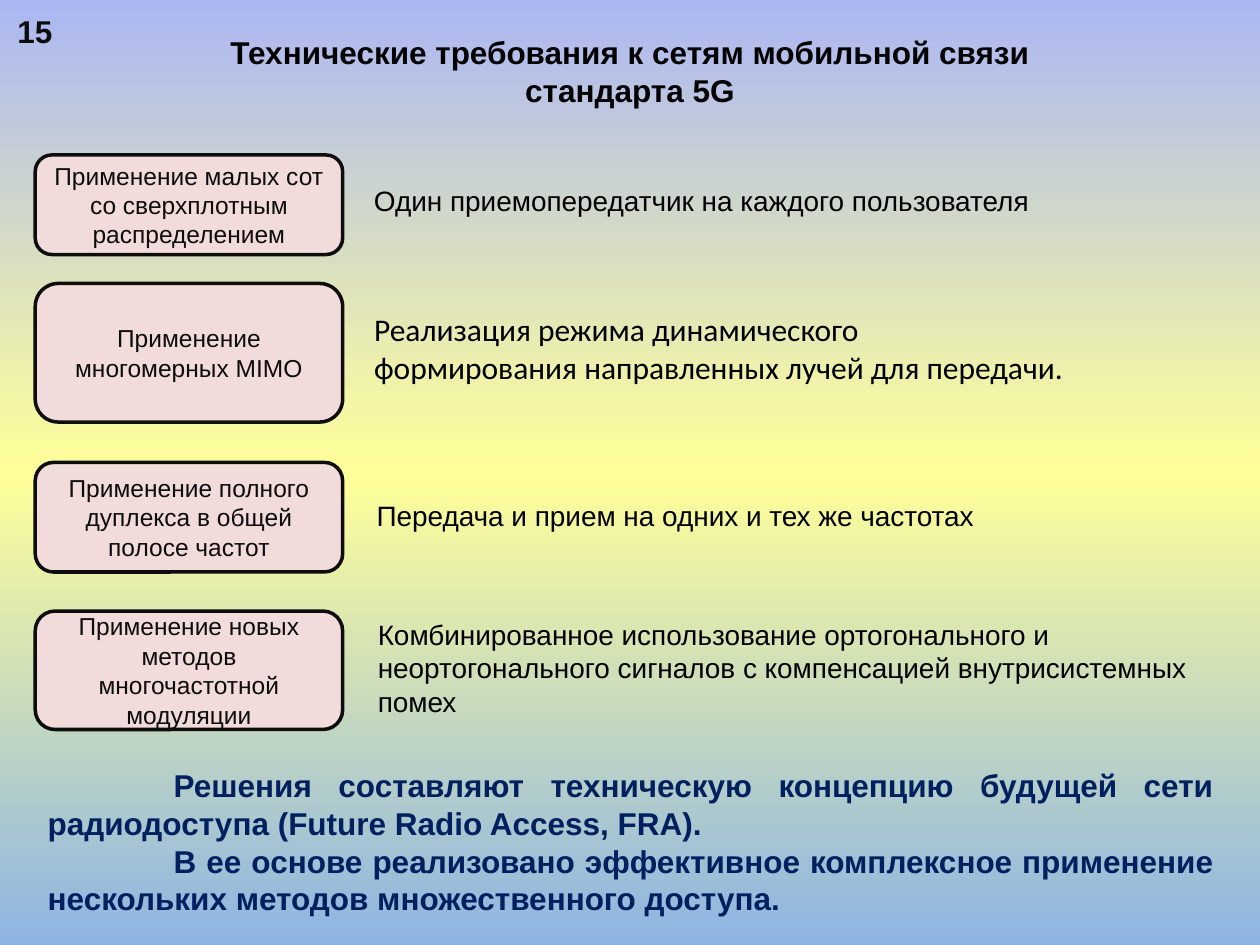
"""Build the slide on technical requirements for 5G networks."""
import copy

import pptx
import pptx.dml.color
import pptx.enum.shapes
import pptx.enum.text
import pptx.util

Inches, Pt = pptx.util.Inches, pptx.util.Pt
ALIGN, ANCHOR = pptx.enum.text.PP_ALIGN, pptx.enum.text.MSO_ANCHOR

HUES = {"low": "8EB4E3", "mid": "FFFF99", "high": "ABB7F3", "pink": "F2DCDB",
        "ink": "0D0D0D", "black": "000000", "navy": "002060"}
TITLE = "Технические требования к сетям мобильной связи стандарта 5G"
ROWS = [
    {"top": 1.23, "high": 0.79, "name": "Применение малых сот со сверхплотным распределением",
     "at": (2.87, 1.41, 7.13, 0.37), "note": ["Один приемопередатчик на каждого пользователя"]},
    {"top": 2.25, "high": 1.1, "name": "Применение многомерных MIMO",
     "at": (2.87, 2.41, 7.01, 0.71),
     "note": ["Реализация режима динамического", "формирования направленных лучей для передачи."],
     "look": {"size": 18, "name": "Calibri", "align": ALIGN.JUSTIFY}},
    {"top": 3.67, "high": 0.87, "name": "Применение полного дуплекса в общей полосе частот",
     "at": (2.89, 3.91, 7.1, 0.37), "note": ["Передача и прием на одних и тех же частотах"]},
    {"top": 4.85, "high": 0.94, "name": "Применение новых методов многочастотной модуляции",
     "at": (2.9, 4.85, 7.1, 0.91),
     "note": ["Комбинированное использование ортогонального и неортогонального сигналов "
              "с компенсацией внутрисистемных помех"]},
]
CLOSE = ["Решения составляют техническую концепцию будущей сети радиодоступа (Future Radio Access, FRA).",
         "В ее основе реализовано эффективное комплексное применение нескольких методов множественного доступа."]
BASE = {"size": 16, "name": "Arial", "hue": "black", "bold": False,
        "align": ALIGN.LEFT, "anchor": ANCHOR.TOP, "indent": 0}
HEAD = {"size": 18, "bold": True, "align": ALIGN.CENTER}
LABEL = {"size": 14, "hue": "ink", "align": ALIGN.CENTER, "anchor": ANCHOR.MIDDLE}
PAGE = {"size": 18, "bold": True, "hue": "ink"}
END = {"size": 18, "bold": True, "hue": "navy", "align": ALIGN.JUSTIFY, "indent": 1}


def tint(hue):
    return pptx.dml.color.RGBColor.from_string(HUES[hue])


def write(shape, lines, look):
    look = BASE | look
    frame = shape.text_frame
    frame.text = "\n".join(lines)
    for key, value in {"word_wrap": True, "vertical_anchor": look["anchor"],
                       "auto_size": pptx.enum.text.MSO_AUTO_SIZE.NONE}.items():
        setattr(frame, key, value)
    for para in frame.paragraphs:
        para.alignment = look["align"]
        if look["indent"]:
            para._p.get_or_add_pPr().set("indent", str(Inches(look["indent"])))
        font = para.runs[0].font
        for key, value in {"size": Pt(look["size"]), "name": look["name"], "bold": look["bold"]}.items():
            setattr(font, key, value)
        font.color.rgb = tint(look["hue"])


def note(slide, at, lines, look):
    write(slide.shapes.add_textbox(*map(Inches, at)), lines, look)


def card(slide, row):
    kind = pptx.enum.shapes.MSO_SHAPE.ROUNDED_RECTANGLE
    shape = slide.shapes.add_shape(kind, *map(Inches, (0.28, row["top"], 2.44, row["high"])))
    shape.shadow.inherit = False
    shape.fill.solid()
    shape.fill.fore_color.rgb = tint("pink")
    shape.line.color.rgb = tint("ink")
    shape.line.width = Pt(2)
    write(shape, [row["name"]], LABEL)


def paint(slide):
    fill = slide.background.fill
    fill.gradient()
    fill.gradient_angle = 90
    stops = slide._element.xpath(".//p:bg//a:gsLst")[0]
    stops.insert(1, copy.deepcopy(stops[0]))
    for stop, hue, place in zip(fill.gradient_stops, ("low", "mid", "high"), (0, 0.5, 1)):
        stop.color.rgb = tint(hue)
        stop.position = place


def main():
    deck = pptx.Presentation()
    deck.slide_width, deck.slide_height = Inches(10), Inches(7.5)
    slide = deck.slides.add_slide(deck.slide_layouts[5])
    paint(slide)
    title = slide.shapes.title
    for key, value in zip(("left", "top", "width", "height"), (1.3, 0.21, 7.4, 0.71)):
        setattr(title, key, Inches(value))
    write(title, [TITLE], HEAD)
    for row in ROWS:
        card(slide, row)
        note(slide, row["at"], row["note"], row.get("look", {}))
    note(slide, (0.04, 0.05, 0.55, 0.4), ["15"], PAGE)
    note(slide, (0.28, 6.03, 9.45, 1.31), CLOSE, END)
    deck.save("out.pptx")


if __name__ == "__main__":
    main()
